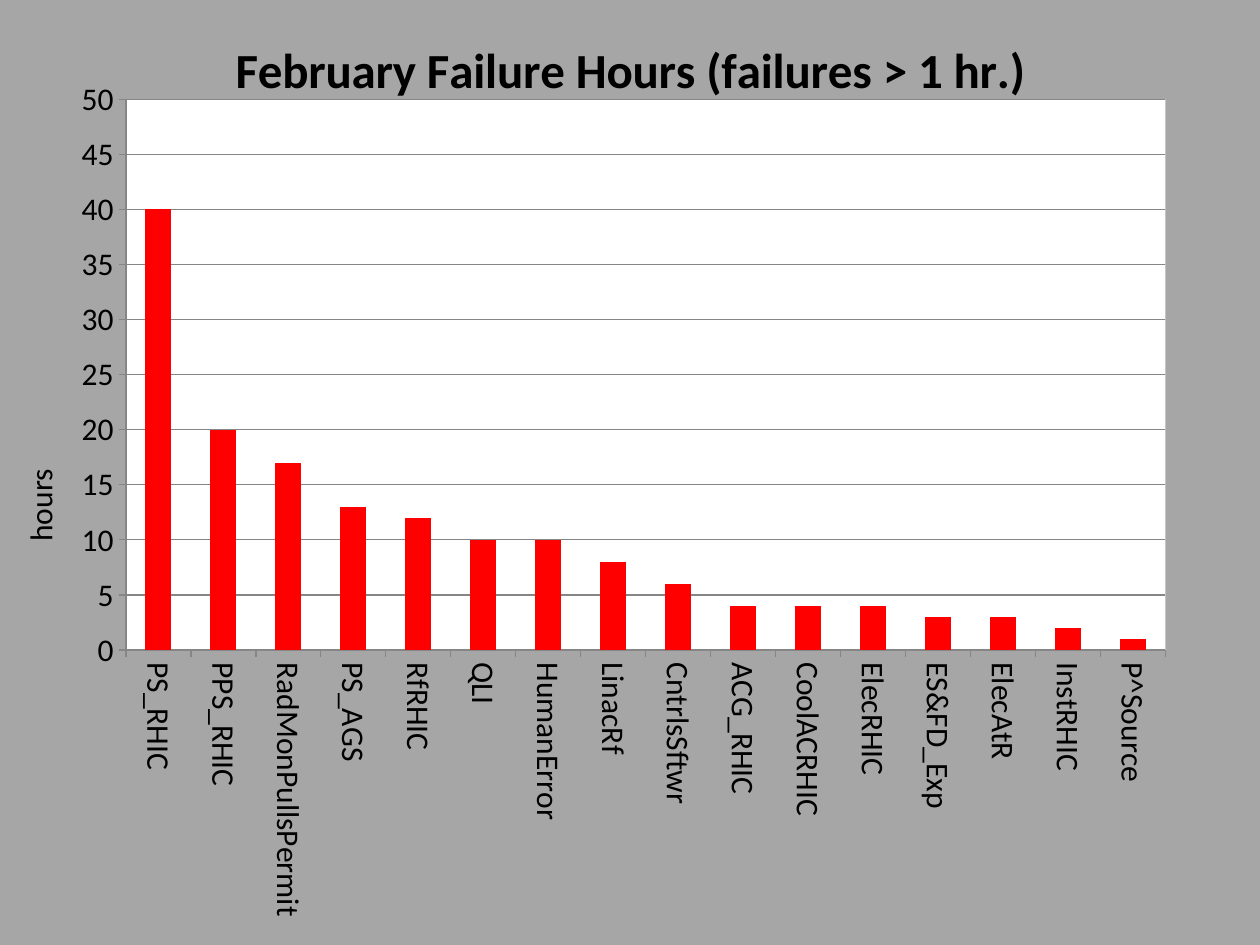
import pptx
import pptx.chart.data
import pptx.dml.color
import pptx.enum.chart
import pptx.oxml
import pptx.oxml.ns
import pptx.util
from pptx.util import Inches

COLORS = {"text": "000000", "backdrop": "A6A6A6", "plot": "FFFFFF",
          "bar": "FF0000", "rule": "868686"}

FAILURE_HOURS = {
    "PS_RHIC": 40, "PPS_RHIC": 20, "RadMonPullsPermit": 17, "PS_AGS": 13,
    "RfRHIC": 12, "QLI": 10, "HumanError": 10, "LinacRf": 8,
    "CntrlsSftwr": 6, "ACG_RHIC": 4, "CoolACRHIC": 4, "ElecRHIC": 4,
    "ES&FD_Exp": 3, "ElecAtR": 3, "InstRHIC": 2, "P^Source": 1,
}


def rgb(name):
    return pptx.dml.color.RGBColor.from_string(COLORS[name])


def chart_xml(tag, body):
    """Return a chart element with the given content."""
    namespaces = pptx.oxml.ns.nsdecls("c", "a")
    return pptx.oxml.parse_xml(f"<c:{tag} {namespaces}>{body}</c:{tag}>")


def area_fill(color):
    return chart_xml("spPr", f'<a:solidFill><a:srgbClr val="{COLORS[color]}"/>'
                             "</a:solidFill><a:ln><a:noFill/></a:ln>")


def place(element, target="", **fractions):
    """Give a title or plot area a manual layout in fractions of the chart."""
    modes = "".join(f'<c:{side}Mode val="edge"/>' for side in "xy")
    sizes = "".join(f'<c:{key} val="{value}"/>' for key, value in fractions.items())
    layout = chart_xml("layout", f"<c:manualLayout>{target}{modes}{sizes}</c:manualLayout>")
    for old in element.xpath("c:layout"):
        element.remove(old)
    text = element.xpath("c:tx")
    if text:
        text[0].addnext(layout)
    else:
        element.insert(0, layout)


class SlideBuilder:
    font_name = "Calibri"
    body_size = 18

    def __init__(self, slide):
        self.slide = slide

    def style(self, font, size=body_size, bold=False):
        font.name = self.font_name
        font.size = pptx.util.Pt(size)
        font.bold = bold
        font.color.rgb = rgb("text")

    def title(self, title, text, x, y, size=body_size, bold=False):
        title.text_frame.text = text
        self.style(title.text_frame.paragraphs[0].font, size, bold)
        place(title._element, x=x, y=y)

    def axis(self, axis, label_turn=0):
        axis.major_tick_mark = pptx.enum.chart.XL_TICK_MARK.OUTSIDE
        axis.format.line.color.rgb = rgb("rule")
        self.style(axis.tick_labels.font)
        label_body = axis._element.xpath("c:txPr/a:bodyPr")[0]
        label_body.set("rot", str(label_turn * 60000))
        label_body.set("vert", "horz")

    def column_chart(self, values, heading, unit, left, top, width, height):
        data = pptx.chart.data.CategoryChartData(number_format="0")
        data.categories = list(values)
        data.add_series("Series 1", list(values.values()))
        chart = self.slide.shapes.add_chart(
            pptx.enum.chart.XL_CHART_TYPE.COLUMN_CLUSTERED,
            left, top, width, height, data).chart
        chart.has_legend = False
        self.style(chart.font)

        # Heading
        chart.has_title = True
        self.title(chart.chart_title, heading, 0.18, 0.03, size=28, bold=True)

        # Axes
        self.axis(chart.category_axis, label_turn=90)
        hours = chart.value_axis
        self.axis(hours)
        hours.minimum_scale, hours.maximum_scale, hours.major_unit = 0, 50, 5
        hours.tick_labels.number_format = "0"
        hours.tick_labels.number_format_is_linked = False
        hours.has_major_gridlines = True
        hours.major_gridlines.format.line.color.rgb = rgb("rule")
        hours.has_title = True
        self.title(hours.axis_title, unit, 0.01, 0.49)
        unit_body = hours.axis_title._element.xpath("c:tx/c:rich/a:bodyPr")[0]
        unit_body.set("rot", "-5400000")
        unit_body.set("vert", "horz")

        # Columns
        columns = chart.plots[0]
        columns.gap_width = 150
        columns.vary_by_categories = False
        bars = columns.series[0].format.fill
        bars.solid()
        bars.fore_color.rgb = rgb("bar")

        # Plot area and backdrop
        plot_area = chart._chartSpace.xpath("c:chart/c:plotArea")[0]
        place(plot_area, '<c:layoutTarget val="inner"/>',
              x=0.1, y=0.105, w=0.825, h=0.583)
        plot_area.append(area_fill("plot"))
        chart._chartSpace.xpath("c:chart")[0].addnext(area_fill("backdrop"))


def main():
    deck = pptx.Presentation()
    deck.slide_width, deck.slide_height = Inches(10), Inches(7.5)
    builder = SlideBuilder(deck.slides.add_slide(deck.slide_layouts[6]))
    builder.column_chart(FAILURE_HOURS, "February Failure Hours (failures > 1 hr.)",
                         "hours", Inches(0), Inches(0), Inches(10), Inches(7.5))
    deck.save("out.pptx")


if __name__ == "__main__":
    main()
